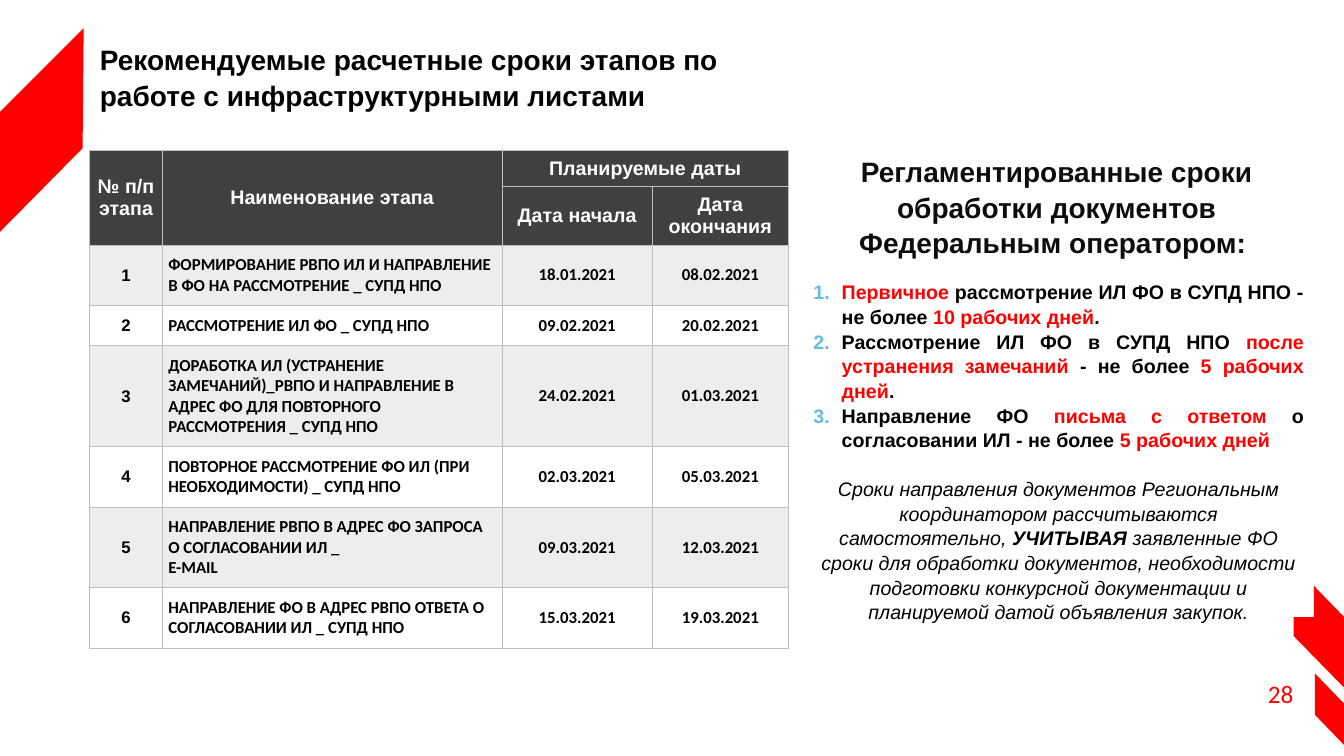
from lxml import etree
from pptx import Presentation
from pptx import util as u
from pptx.dml.color import RGBColor
from pptx.enum import shapes, text
from pptx.oxml import parse_xml
from pptx.oxml.ns import nsdecls, qn

PX = 9144  # 100 px to the inch
COLORS = {"red": "FF0000", "black": "000000", "heading": "0D0D0D", "white": "FFFFFF",
          "header": "404040", "band": "EDEDED", "border": "BFBFBF", "number": "64BDE1"}
LEFT, CENTER, RIGHT, JUSTIFY = (text.PP_ALIGN.LEFT, text.PP_ALIGN.CENTER,
                                text.PP_ALIGN.RIGHT, text.PP_ALIGN.JUSTIFY)
LOOSE = 1.05  # line spacing outside the table

RIBBONS = [
    [(0, 230), (0, 111), (83, 28), (82, 147)],
    [(1303, 581), (1333, 612), (1333, 682), (1283, 631), (1283, 612), (1303, 612)],
    [(1333, 739), (1304, 709), (1304, 668), (1333, 698)],
]

COLUMNS = [72, 337, 149, 135]
ROWS = [36, 58, 60, 40, 100, 60, 80, 60]
HEADER = [
    ["№ п/п\nэтапа", "Наименование этапа", "Планируемые даты", ""],
    ["", "", "Дата начала", "Дата окончания"],
]
MERGES = [((0, 0), (1, 0)), ((0, 1), (1, 1)), ((0, 2), (0, 3))]
STAGES = [
    ("ФОРМИРОВАНИЕ РВПО ИЛ И НАПРАВЛЕНИЕ В ФО НА РАССМОТРЕНИЕ _ СУПД НПО",
     "18.01.2021", "08.02.2021"),
    ("РАССМОТРЕНИЕ ИЛ ФО _ СУПД НПО", "09.02.2021", "20.02.2021"),
    ("ДОРАБОТКА ИЛ (УСТРАНЕНИЕ ЗАМЕЧАНИЙ)_РВПО И НАПРАВЛЕНИЕ В АДРЕС ФО ДЛЯ ПОВТОРНОГО "
     "РАССМОТРЕНИЯ _ СУПД НПО", "24.02.2021", "01.03.2021"),
    ("ПОВТОРНОЕ РАССМОТРЕНИЕ ФО ИЛ (ПРИ НЕОБХОДИМОСТИ) _ СУПД НПО",
     "02.03.2021", "05.03.2021"),
    ("НАПРАВЛЕНИЕ РВПО В АДРЕС ФО ЗАПРОСА О СОГЛАСОВАНИИ ИЛ _\nE-MAIL",
     "09.03.2021", "12.03.2021"),
    ("НАПРАВЛЕНИЕ ФО В АДРЕС РВПО ОТВЕТА О СОГЛАСОВАНИИ ИЛ _ СУПД НПО",
     "15.03.2021", "19.03.2021"),
]

# Each span is (text, colour)
RULES = [
    [("Первичное", "red"), (" рассмотрение ИЛ ФО в СУПД НПО - не более ", "black"),
     ("10 рабочих дней", "red"), (".", "black")],
    [("Рассмотрение ИЛ ФО в СУПД НПО ", "black"), ("после устранения замечаний", "red"),
     (" - не более ", "black"), ("5 рабочих дней", "red"), (".", "black")],
    [("Направление ФО ", "black"), ("письма с ответом ", "red"),
     ("о согласовании ИЛ - не более ", "black"), ("5 рабочих дней", "red")],
]
# Each span is (text, bold)
NOTE = [
    ("Сроки направления документов Региональным координатором рассчитываются "
     "самостоятельно, ", False),
    ("УЧИТЫВАЯ ", True),
    ("заявленные ФО сроки для обработки документов, необходимости подготовки конкурсной "
     "документации и планируемой датой объявления закупок.", False),
]


def rgb(name):
    return RGBColor.from_string(COLORS[name])


def apply(target, **values):
    for name, value in values.items():
        setattr(target, name, value)


def scaled(box):
    return [length * PX for length in box]


def add_span(para, words, color, size, **font):
    span = para.add_run()
    span.text = words
    apply(span.font, **{"name": "Arial", "size": u.Pt(size), "bold": True, **font})
    span.font.color.rgb = rgb(color)


def prepare(frame, margin_x=10, margin_y=5):
    apply(frame, word_wrap=True, auto_size=text.MSO_AUTO_SIZE.NONE,
          vertical_anchor=text.MSO_ANCHOR.TOP,
          margin_left=margin_x * PX, margin_right=margin_x * PX,
          margin_top=margin_y * PX, margin_bottom=margin_y * PX)
    return frame


def add_ribbon(page, points):
    builder = page.shapes.build_freeform(*points[0], scale=PX)
    builder.add_line_segments(points[1:], close=True)
    ribbon = builder.convert_to_shape()
    ribbon.shadow.inherit = False
    ribbon.fill.solid()
    ribbon.fill.fore_color.rgb = rgb("red")
    ribbon.line.fill.background()


def set_title(page, box):
    title = page.shapes.title
    apply(title, **dict(zip(("left", "top", "width", "height"), scaled(box))))
    para = prepare(title.text_frame).paragraphs[0]
    apply(para, alignment=LEFT, line_spacing=LOOSE)
    add_span(para, "Рекомендуемые расчетные сроки этапов по работе с инфраструктурными листами",
             "black", 20)


def add_label(page, box, words, color, size, align, spacing=1.0, margin=10, **font):
    label = page.shapes.add_textbox(*scaled(box))
    para = prepare(label.text_frame, margin).paragraphs[0]
    apply(para, alignment=align, line_spacing=spacing)
    add_span(para, words, color, size, **font)


def add_borders(cell):
    properties = cell._tc.get_or_add_tcPr()
    for side in "LRTB":
        properties.append(parse_xml(
            f'<a:ln{side} {nsdecls("a")} w="6350"><a:solidFill>'
            f'<a:srgbClr val="{COLORS["border"]}"/></a:solidFill></a:ln{side}>'))


def fill_cell(cell, words, fill, color, size, align, font, margin):
    add_borders(cell)
    apply(cell, vertical_anchor=text.MSO_ANCHOR.MIDDLE, margin_left=margin * PX,
          margin_right=margin * PX, margin_top=0, margin_bottom=0)
    if fill:
        cell.fill.solid()
        cell.fill.fore_color.rgb = rgb(fill)
    else:
        cell.fill.background()
    for index, line in enumerate(words.split("\n")):
        para = cell.text_frame.add_paragraph() if index else cell.text_frame.paragraphs[0]
        para.alignment = align
        add_span(para, line, color, size, name=font)


def add_schedule(page, left, top):
    box = (left, top, sum(COLUMNS), sum(ROWS))
    table = page.shapes.add_table(len(ROWS), len(COLUMNS), *scaled(box)).table
    apply(table, first_row=False, horz_banding=False)
    for column, width in zip(table.columns, COLUMNS):
        column.width = width * PX
    for row, height in zip(table.rows, ROWS):
        row.height = height * PX
    for first, last in MERGES:
        table.cell(*first).merge(table.cell(*last))
    # Header rows
    for r, row in enumerate(HEADER):
        for c, words in enumerate(row):
            fill_cell(table.cell(r, c), words, "header", "white", 14, CENTER, "Arial", 6)
    # Stage rows
    for r, stage in enumerate(STAGES):
        for c, words in enumerate((str(r + 1), *stage)):
            fill_cell(table.cell(r + len(HEADER), c), words, None if r % 2 else "band",
                      "black", 12, LEFT if c == 1 else CENTER,
                      "Calibri" if c else "Arial", 1 if c > 1 else 6)


def number(para, indent):
    properties = para._p.get_or_add_pPr()
    apply_indent = {"marL": indent * PX, "indent": -indent * PX}
    for name, value in apply_indent.items():
        properties.set(name, str(value))
    color = etree.SubElement(properties, qn("a:buClr"))
    etree.SubElement(color, qn("a:srgbClr"), val=COLORS["number"])
    etree.SubElement(properties, qn("a:buAutoNum"), type="arabicPeriod")


def add_rules(page, box):
    panel = page.shapes.add_shape(shapes.MSO_SHAPE.RECTANGLE, *scaled(box))
    panel.shadow.inherit = False
    panel.fill.solid()
    panel.fill.fore_color.rgb = rgb("white")
    panel.line.fill.background()
    frame = prepare(panel.text_frame)
    # Numbered terms
    for index, rule in enumerate(RULES):
        para = frame.add_paragraph() if index else frame.paragraphs[0]
        number(para, 28)
        apply(para, alignment=JUSTIFY, line_spacing=LOOSE)
        for words, color in rule:
            add_span(para, words, color, 14)
    # Closing note
    para = frame.add_paragraph()
    apply(para, alignment=CENTER, line_spacing=LOOSE, space_before=u.Pt(17))
    for words, bold in NOTE:
        add_span(para, words, "black", 14, bold=bold, italic=True)


def main():
    deck = Presentation()
    apply(deck, slide_width=1333 * PX, slide_height=750 * PX)
    page = deck.slides.add_slide(deck.slide_layouts[5])
    for points in RIBBONS:
        add_ribbon(page, points)
    add_label(page, (1238, 668, 50, 40), "28", "red", 18, RIGHT, margin=5,
              name="Calibri", bold=False)
    set_title(page, (89, 36, 693, 77))
    add_schedule(page, 89, 149)
    add_label(page, (797, 147, 502, 111),
              "Регламентированные сроки обработки документов Федеральным оператором: ",
              "heading", 20, CENTER, LOOSE)
    add_rules(page, (797, 272, 506, 340))
    deck.save("out.pptx")


if __name__ == "__main__":
    main()
